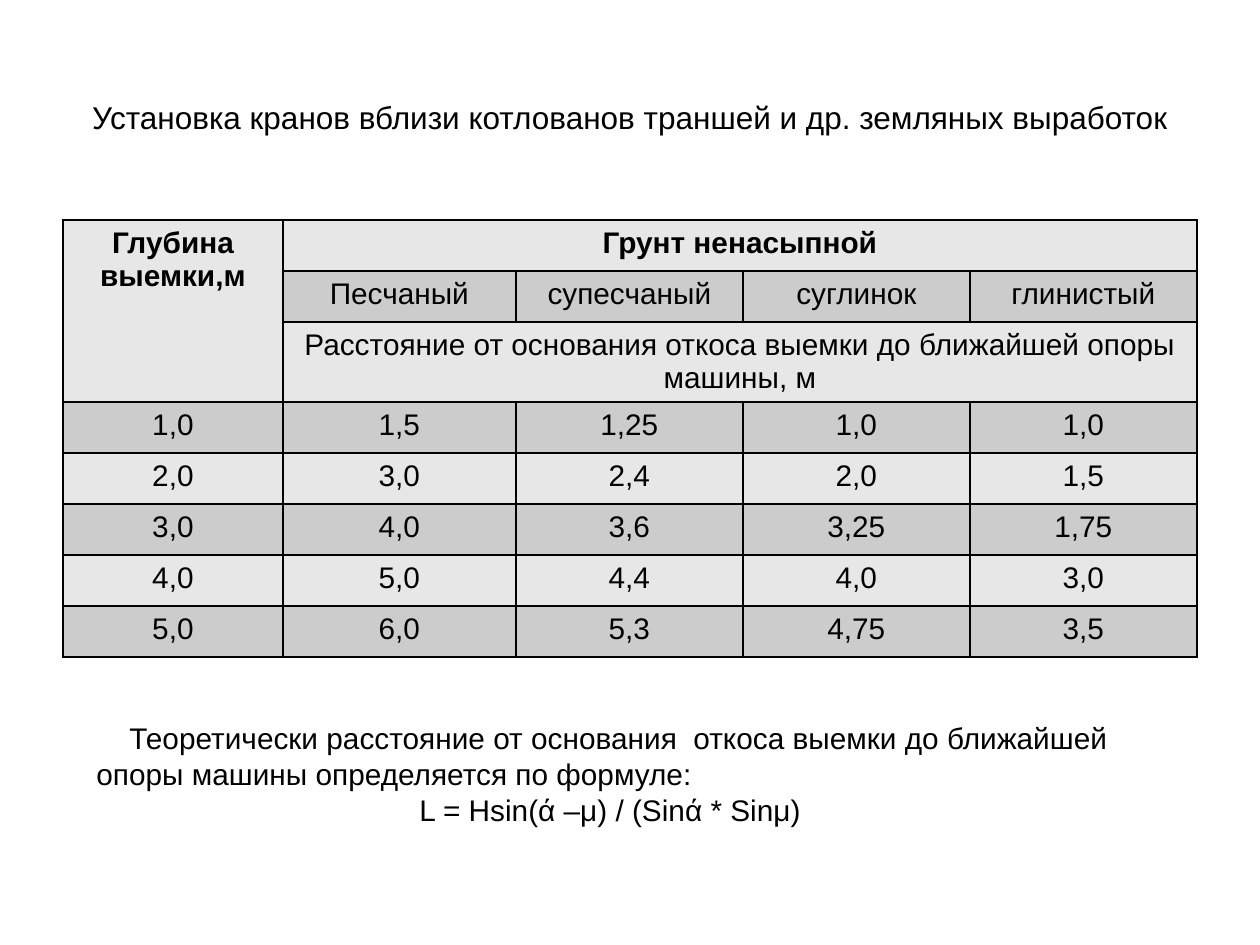
from dataclasses import dataclass

from lxml.etree import SubElement
from pptx import Presentation
from pptx.dml.color import RGBColor
from pptx.enum.text import MSO_ANCHOR as Anchor, PP_ALIGN as Align
from pptx.oxml.ns import qn
from pptx.util import Emu, Pt

EMU_PER_PX = 914400 / 126
BLACK = "000000"
BANDS = ("E7E7E7", "CCCCCC")


@dataclass(frozen=True)
class Entry:
    row: int
    col: int
    text: str
    bold: bool = False
    rows: int = 1
    cols: int = 1


def px(length: int) -> Emu:
    return Emu(round(length * EMU_PER_PX))


def color(value: str) -> RGBColor:
    return RGBColor.from_string(value)


def write(paragraph, text: str, *, size: int = 17, bold: bool = False,
          align: Align = Align.CENTER, indent: int = 0) -> None:
    paragraph.alignment = align
    if indent:
        paragraph._p.get_or_add_pPr().set("indent", str(px(indent)))
    run = paragraph.add_run()
    run.text = text
    run.font.name = "Arial"
    run.font.size = Pt(size)
    run.font.bold = bold
    run.font.color.rgb = color(BLACK)


def add_borders(cell) -> None:
    properties = cell._tc.get_or_add_tcPr()
    for side in ("a:lnL", "a:lnR", "a:lnT", "a:lnB"):
        line = SubElement(properties, qn(side), w=str(Pt(1)))
        fill = SubElement(line, qn("a:solidFill"))
        SubElement(fill, qn("a:srgbClr"), val=BLACK)


def fill_entry(table, entry: Entry) -> None:
    cell = table.cell(entry.row, entry.col)
    if entry.rows > 1 or entry.cols > 1:
        cell.merge(table.cell(entry.row + entry.rows - 1,
                              entry.col + entry.cols - 1))
    write(cell.text_frame.paragraphs[0], entry.text, bold=entry.bold)


COLUMN_WIDTHS = (220, 233, 227, 227, 227)
ROW_HEIGHTS = (51, 51, 80, 51, 51, 51, 51, 51)
SOILS = ("Песчаный", "супесчаный", "суглинок", "глинистый")
DISTANCES = (
    ("1,0", "1,5", "1,25", "1,0", "1,0"),
    ("2,0", "3,0", "2,4", "2,0", "1,5"),
    ("3,0", "4,0", "3,6", "3,25", "1,75"),
    ("4,0", "5,0", "4,4", "4,0", "3,0"),
    ("5,0", "6,0", "5,3", "4,75", "3,5"),
)
ENTRIES = [
    Entry(0, 0, "Глубина выемки,м", bold=True, rows=3),
    Entry(0, 1, "Грунт ненасыпной", bold=True, cols=4),
    Entry(2, 1, "Расстояние от основания откоса выемки до ближайшей опоры "
                "машины, м", cols=4),
    *(Entry(1, col, soil) for col, soil in enumerate(SOILS, 1)),
    *(Entry(row, col, value) for row, values in enumerate(DISTANCES, 3)
      for col, value in enumerate(values)),
]


def main() -> None:
    deck = Presentation()
    deck.slide_width, deck.slide_height = px(1260), px(945)
    slide = deck.slides.add_slide(deck.slide_layouts[5])

    # Title
    title = slide.shapes.title
    title.left, title.top, title.width, title.height = map(
        px, (63, 38, 1134, 157))
    title.text_frame.vertical_anchor = Anchor.MIDDLE
    write(title.text_frame.paragraphs[0],
          "Установка кранов вблизи котлованов траншей и др. земляных выработок",
          size=18)

    # Table of distances by depth and soil
    table = slide.shapes.add_table(
        len(ROW_HEIGHTS), len(COLUMN_WIDTHS), px(63), px(220),
        px(sum(COLUMN_WIDTHS)), px(sum(ROW_HEIGHTS))).table
    table.first_row = table.horz_banding = False
    for column, width in zip(table.columns, COLUMN_WIDTHS):
        column.width = px(width)
    for index, (row, height) in enumerate(zip(table.rows, ROW_HEIGHTS)):
        row.height = px(height)
        for cell in row.cells:
            add_borders(cell)
            cell.fill.solid()
            cell.fill.fore_color.rgb = color(BANDS[index % 2])
    for entry in ENTRIES:
        fill_entry(table, entry)

    # Formula note
    note = slide.shapes.add_textbox(
        px(84), px(714), px(1076), px(121)).text_frame
    note.word_wrap = True
    write(note.paragraphs[0],
          "Теоретически расстояние от основания  откоса выемки до ближайшей "
          "опоры машины определяется по формуле:", align=Align.LEFT, indent=33)
    write(note.add_paragraph(), "L = Hsin(ά –μ) / (Sinά * Sinμ)",
          align=Align.LEFT, indent=323)

    deck.save("out.pptx")


if __name__ == "__main__":
    main()
